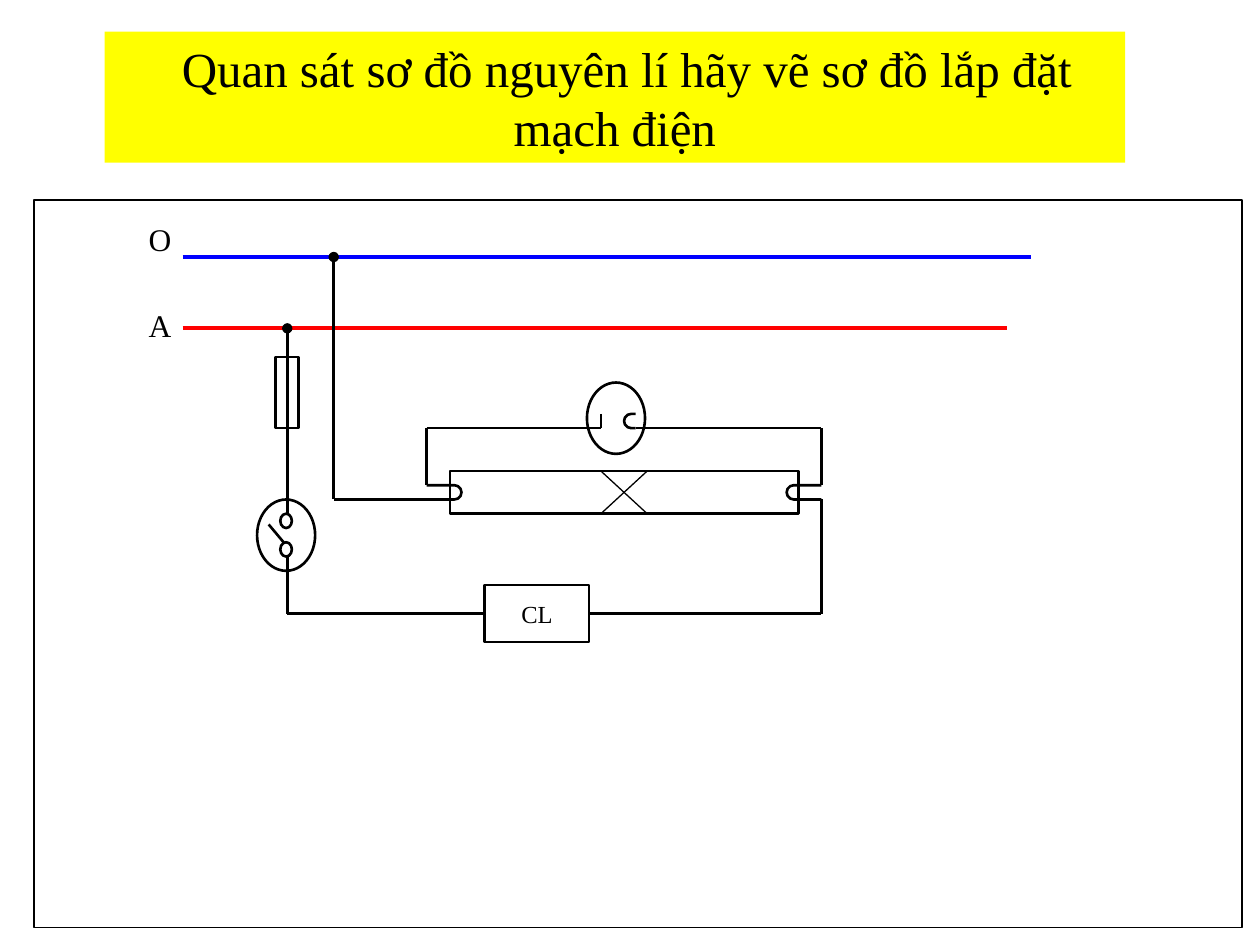
from lxml import etree
from pptx import Presentation
from pptx import util as u
from pptx.dml.color import RGBColor
from pptx.enum import shapes, text
from pptx.oxml.ns import qn

FONT = "Times New Roman"
BLACK, WHITE, RED, BLUE, YELLOW = "000000", "FFFFFF", "FF0000", "0000FF", "FFFF00"
RECT = shapes.MSO_SHAPE.RECTANGLE
OVAL = shapes.MSO_SHAPE.OVAL
ROUND = shapes.MSO_SHAPE.ROUNDED_RECTANGLE

# Circuit grid: column 0 is the switch branch, row 0 the neutral wire.
LEFT, TOP = 2.28, 2.04
COL = (6.52 - LEFT) / 46
ROW = (4.87 - TOP) / 25


def color(value):
    return RGBColor.from_string(value)


def x(col):
    return u.Inches(LEFT + col * COL)


def y(row):
    return u.Inches(TOP + row * ROW)


def box(col, row, cols, rows):
    """Left, top, width and height of a block of grid cells."""
    return x(col), y(row), u.Inches(cols * COL), u.Inches(rows * ROW)


def set_line(line, value, width):
    line.color.rgb = color(value)
    line.width = u.Pt(width)


def add_part(g, kind, cells, fill=None, line=BLACK, width=1.5):
    sp = g.shapes.add_shape(kind, *box(*cells))
    sp.shadow.inherit = False
    if fill:
        sp.fill.solid()
        sp.fill.fore_color.rgb = color(fill)
    else:
        sp.fill.background()
    if line:
        set_line(sp.line, line, width)
    else:
        sp.line.fill.background()
    return sp


def add_wire(g, start, end, line=BLACK, width=1.5, node=False):
    """Straight wire between two grid points, with a junction dot at its start if node."""
    c = g.shapes.add_connector(shapes.MSO_CONNECTOR.STRAIGHT, x(start[0]), y(start[1]),
                               x(end[0]), y(end[1]))
    set_line(c.line, line, width)
    if node:
        etree.SubElement(c.line._get_or_add_ln(), qn("a:headEnd"), type="oval")
    etree.SubElement(c._element.spPr, qn("a:effectLst"))


def add_hook(g, loop, mask):
    """Electrode: a pill outline whose outer part is masked."""
    add_part(g, ROUND, loop).adjustments[0] = 0.5
    add_part(g, RECT, mask, WHITE, None)


def write(tf, words, size, align=None, **frame):
    for name, value in frame.items():
        setattr(tf, name, value)
    p = tf.paragraphs[0]
    p.alignment = align
    r = p.add_run()
    r.text = words
    for name, value in {"name": FONT, "size": u.Pt(size)}.items():
        setattr(r.font, name, value)
    r.font.color.rgb = color(BLACK)
    return p


def add_label(g, words, cells):
    sp = g.shapes.add_textbox(*box(*cells))
    write(sp.text_frame, words, 18, word_wrap=True)


def add_title(s, words):
    sp = s.shapes.title
    place = {"left": 0.83, "top": 0.25, "width": 8.1, "height": 1.04}
    for name, value in place.items():
        setattr(sp, name, u.Inches(value))
    sp.fill.solid()
    sp.fill.fore_color.rgb = color(YELLOW)
    p = write(sp.text_frame, words, 28, text.PP_ALIGN.CENTER, word_wrap=True,
              auto_size=text.MSO_AUTO_SIZE.NONE, vertical_anchor=text.MSO_ANCHOR.MIDDLE)
    pPr = p._p.get_or_add_pPr()
    pPr.set("marL", "0")
    pPr.set("indent", str(u.Inches(0.19)))


def add_supply(g):
    add_wire(g, (-9, 5), (62, 5), RED, 2.25)
    add_wire(g, (-9, 0), (64, 0), BLUE, 2.25)
    add_wire(g, (0, 5), (0, 19), node=True)
    add_wire(g, (4, 0), (4, 17), node=True)
    add_label(g, "A", (-13, 3, 4, 5))
    add_label(g, "O", (-13, -3, 6, 5))


def add_fuse_and_switch(g):
    add_part(g, RECT, (-1, 7, 2, 5))
    add_part(g, OVAL, (-2.6, 17, 5, 5))
    add_wire(g, (-1.6, 18.75), (0.1, 20.4))
    for row in (18, 20):
        add_part(g, OVAL, (-0.6, row, 1, 1), WHITE)
    add_wire(g, (0, 21), (0, 25))


def add_lamp(g):
    add_part(g, RECT, (14, 15, 30, 3), WHITE)
    add_hook(g, (10, 16, 5, 1), (9, 14, 3, 5))
    add_hook(g, (43, 16, 5, 1), (46, 14, 3, 5))
    for col in (12, 46):
        add_wire(g, (col, 16), (col, 12))
    add_wire(g, (27, 15), (31, 18), width=0.75)
    add_wire(g, (27, 18), (31, 15), width=0.75)


def add_ballast(g):
    add_wire(g, (0, 25), (46, 25))
    sp = add_part(g, RECT, (17, 23, 9, 4), WHITE)
    write(sp.text_frame, "CL", 14, text.PP_ALIGN.CENTER, word_wrap=False,
          vertical_anchor=text.MSO_ANCHOR.MIDDLE)
    add_wire(g, (46, 17), (46, 25))
    add_wire(g, (4, 17), (12, 17))


def add_starter(g):
    add_wire(g, (12, 12), (27, 12))
    add_hook(g, (29, 11, 3, 1), (30, 10, 3, 3))
    add_wire(g, (27, 11), (27, 12))
    add_part(g, OVAL, (25.8, 8.8, 5, 5))
    add_wire(g, (30, 12), (46, 12))


def main():
    prs = Presentation()
    prs.slide_width, prs.slide_height = u.Inches(10), u.Inches(7.5)
    s = prs.slides.add_slide(prs.slide_layouts[5])
    add_title(s, "Quan sát sơ đồ nguyên lí hãy vẽ sơ đồ lắp đặt mạch điện")
    g = s.shapes.add_group_shape()
    add_part(g, RECT, (-21.8, -4, 104, 51), WHITE, width=0.75)
    for add_section in (add_supply, add_fuse_and_switch, add_lamp, add_ballast, add_starter):
        add_section(g)
    prs.save("out.pptx")


if __name__ == "__main__":
    main()
